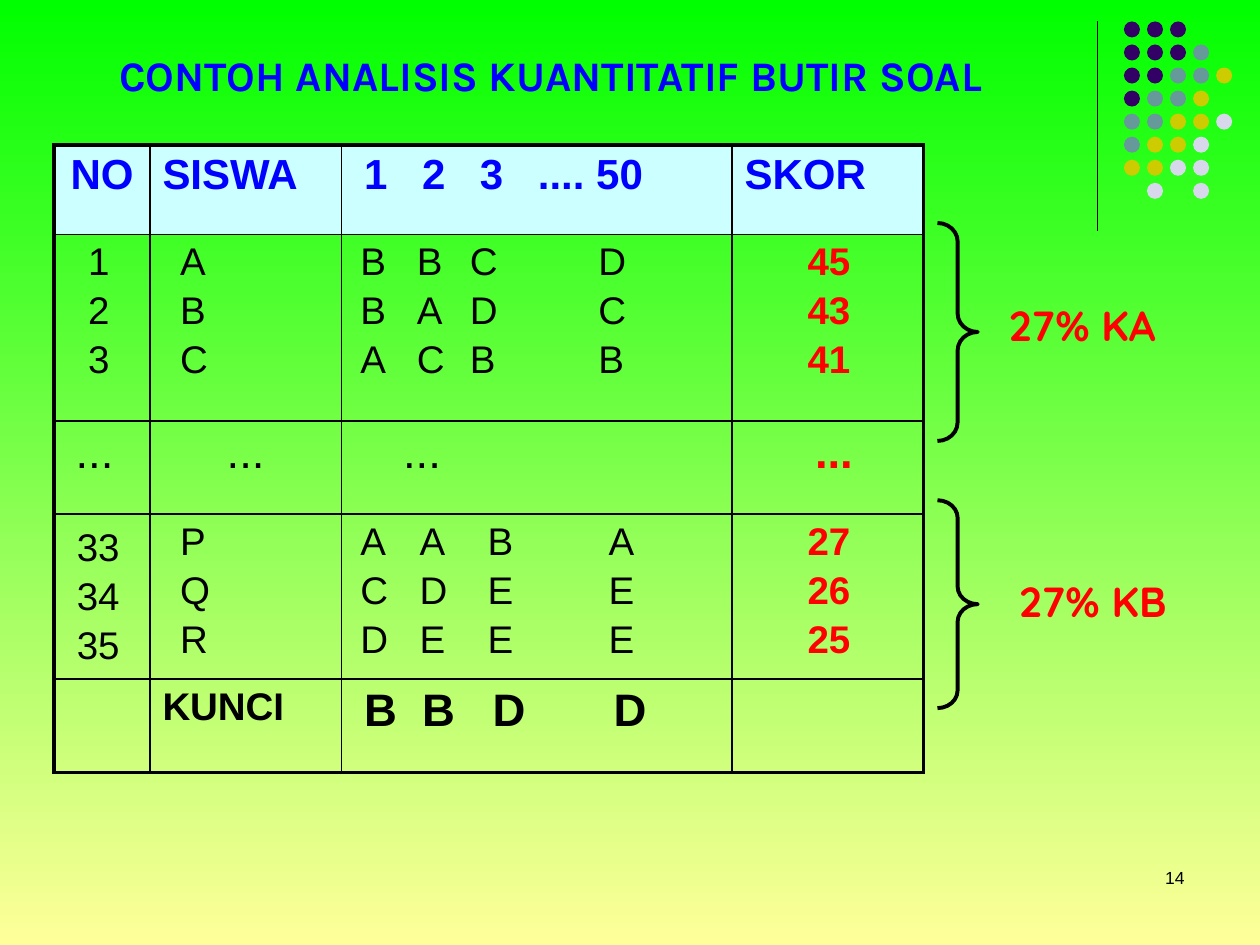
from lxml import etree
from pptx import Presentation, util as u
from pptx.dml.color import RGBColor
from pptx.enum import shapes, text
from pptx.oxml.ns import qn

COLORS = {
    "black": "000000", "blue": "0000FF", "red": "FF0000", "header": "CCFFFF",
    "green": "00FF00", "cream": "FFFF99",
    "P": "330066", "T": "669999", "Y": "CCCC00", "L": "D8D8EC",
}
rgb = {name: RGBColor.from_string(value) for name, value in COLORS.items()}


def grid(*cells):
    """Turn counts of grid cells (100 columns by 75 rows) into lengths."""
    return [u.Inches(count / 10) for count in cells]


def set_font(para, size, color, bold=False, name="Arial"):
    para.font.size, para.font.bold, para.font.name = u.Pt(size), bold, name
    para.font.color.rgb = rgb[color]


deck = Presentation()
deck.slide_width, deck.slide_height = grid(100, 75)
page = deck.slides.add_slide(deck.slide_layouts[6])
backdrop = page.background.fill
backdrop.gradient()
backdrop.gradient_angle = 270
for stop, name in zip(backdrop.gradient_stops, ("green", "cream")):
    stop.color.rgb = rgb[name]

# Corner ornament: a rule and a grid of dots
rule = page.shapes.add_connector(shapes.MSO_CONNECTOR.STRAIGHT, *grid(87.1, 1.7, 87.1, 18.3))
rule.line.color.rgb, rule.line.width = rgb["black"], u.Pt(0.75)
etree.SubElement(rule._element.spPr, qn("a:effectLst"))

DOTS = ["PPP", "PPPT", "PPTTY", "PTTY", "TTYYL", "TYYL", "YYLL", " L L"]
PITCH = 1.83
for row, pattern in enumerate(DOTS):
    for column, kind in enumerate(pattern):
        if kind == " ":
            continue
        dot = page.shapes.add_shape(
            shapes.MSO_SHAPE.OVAL,
            *grid(89.2 + column * PITCH, 1.7 + row * PITCH, 1.27, 1.27))
        dot.shadow.inherit = False
        dot.fill.solid()
        dot.fill.fore_color.rgb = rgb[kind]
        dot.line.fill.background()

# Score table: each cell is (lines, left margin, size, color, bold, centred)
HEAD = (24, "blue", True)
BODY = (22, "black", False)
SCORE = (22, "red", True)
GAP = (26, "black", False)
ROWS = [
    [("NO", 1, *HEAD, True), ("SISWA", 1, *HEAD, False),
     ("1\t2\t3\t.... 50", 1.8, *HEAD, False), ("SKOR", 1, *HEAD, False)],
    [("1\n2\n3", 2.7, *BODY, False), ("A\nB\nC", 2.4, *BODY, False),
     ("B\tB\tC\tD\nB\tA\tD\tC\nA\tC\tB\tB", 1.5, *BODY, False),
     ("45\n43\n41", 6, *SCORE, False)],
    [("...", 1.7, *GAP, False), ("...", 1, *GAP, True),
     ("...", 4.9, *GAP, False), ("...", 2, 26, "red", True, True)],
    [("33\n34\n35", 1.8, *BODY, False), ("P\nQ\nR", 2.4, *BODY, False),
     ("A\tA\tB\tA\nC\tD\tE\tE\nD\tE\tE\tE", 1.5, *BODY, False),
     ("27\n26\n25", 6, *SCORE, False)],
    [("", 1, *BODY, False), ("KUNCI", 1, 22, "black", True, False),
     ("B\tB\tD\tD", 1.8, 26, "black", True, False), ("", 1, *BODY, False)],
]
TAB_STOPS = [(4.6, 9.2, 13.8), (4.5, 8.7, 18.9), (), (4.7, 10.1, 19.7), (4.6, 10.2, 19.8)]
WIDTHS = (7.6, 15.2, 31, 15.2)
HEIGHTS = (7.1, 14.8, 7.4, 13.1, 7.4)

table = page.shapes.add_table(
    len(HEIGHTS), len(WIDTHS), *grid(4.3, 11.5, sum(WIDTHS), sum(HEIGHTS))).table
table.first_row = table.horz_banding = False
for column, width in zip(table.columns, grid(*WIDTHS)):
    column.width = width
for row, height in zip(table.rows, grid(*HEIGHTS)):
    row.height = height

for r, cells in enumerate(ROWS):
    for c, (content, margin, size, color, bold, centred) in enumerate(cells):
        cell = table.cell(r, c)
        cell.margin_left, cell.margin_right = grid(margin, 1)
        cell.text = content
        for index, para in enumerate(cell.text_frame.paragraphs):
            if "\t" in content:
                tabs = etree.SubElement(para._p.get_or_add_pPr(), qn("a:tabLst"))
                for position in grid(*TAB_STOPS[r]):
                    etree.SubElement(tabs, qn("a:tab"), pos=str(position), algn="l")
            if centred:
                para.alignment = text.PP_ALIGN.CENTER
            if index:
                para.space_before = u.Pt(3.5)
            set_font(para, size, color, bold)

        outer = {"a:lnL": c == 0, "a:lnR": c == len(WIDTHS) - 1,
                 "a:lnT": r == 0, "a:lnB": r == len(HEIGHTS) - 1}
        for side, is_outer in outer.items():
            border = etree.SubElement(cell._tc.get_or_add_tcPr(), qn(side),
                                      w=str(u.Pt(2.25 if is_outer else 1)))
            paint = etree.SubElement(border, qn("a:solidFill"))
            etree.SubElement(paint, qn("a:srgbClr"), val=COLORS["black"])
        if r == 0:
            cell.fill.solid()
            cell.fill.fore_color.rgb = rgb["header"]
        else:
            cell.fill.background()
table.cell(3, 0).margin_top = u.Inches(0.1)

# Braces marking the upper and lower groups
for top, height, bend in ((17.7, 17.3, 0.46), (39.7, 16.5, 0.44)):
    brace = page.shapes.add_shape(
        shapes.MSO_SHAPE.RIGHT_BRACE, *grid(74.4, top, 3.2, height))
    brace.adjustments[0], brace.adjustments[1] = bend, 0.5
    brace.shadow.inherit = False
    brace.fill.background()
    brace.line.color.rgb, brace.line.width = rgb["black"], u.Pt(2.25)

# Title, group labels and page number
ALIGN = text.PP_ALIGN
LABELS = [
    ("27% KA", (79.1, 23.3, 15.7, 5), ALIGN.LEFT, (24, "red", True, "Quicksand")),
    ("27% KB", (79.9, 45.2, 15.7, 5), ALIGN.LEFT, (24, "red", True, "Quicksand")),
    ("CONTOH ANALISIS KUANTITATIF BUTIR SOAL", (0, 3.4, 87.4, 5), ALIGN.CENTER,
     (24, "blue", True, "Karla")),
    ("14", (71.7, 68.3, 23.3, 5), ALIGN.RIGHT, (10, "black")),
]
for content, place, alignment, font in LABELS:
    box = page.shapes.add_textbox(*grid(*place))
    box.text_frame.word_wrap = True
    para = box.text_frame.paragraphs[0]
    para.text, para.alignment = content, alignment
    set_font(para, *font)

deck.save("out.pptx")
